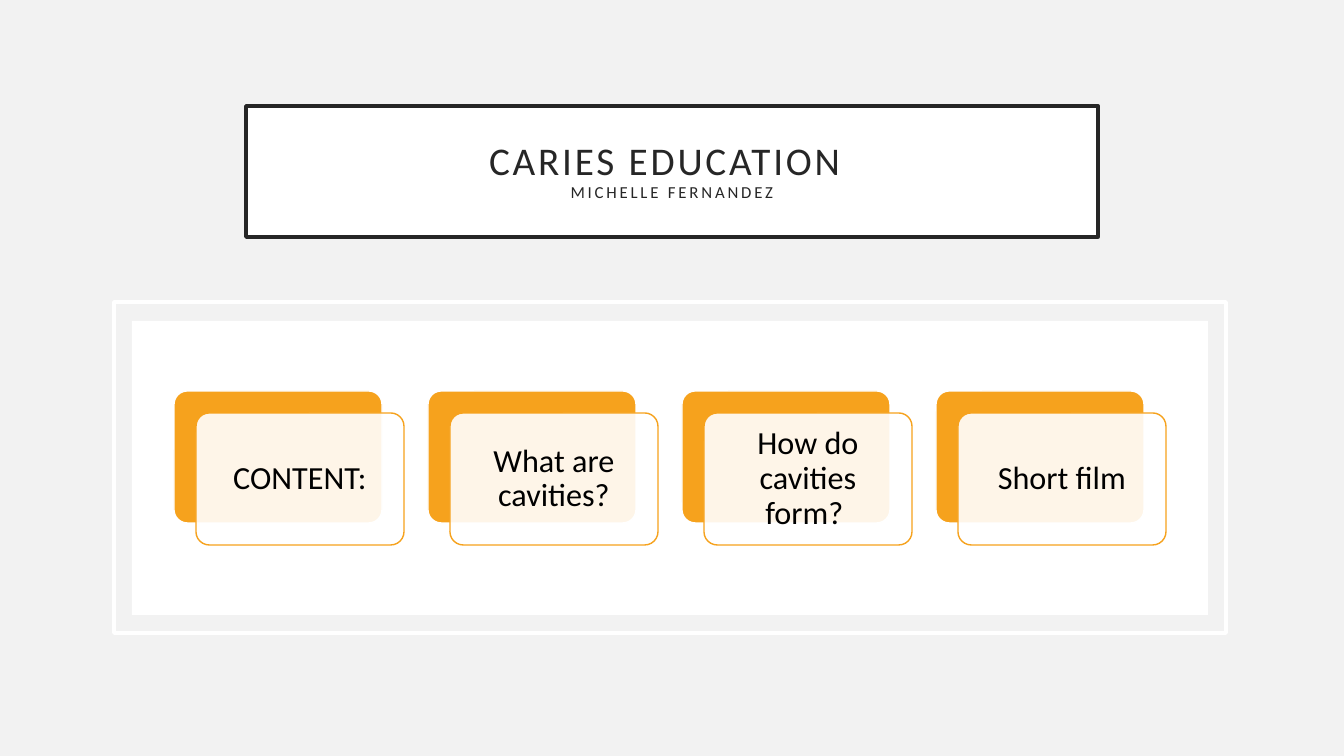
"""Build the title and contents slide of a caries education deck."""
from lxml import etree
from pptx import Presentation
from pptx import util as u
from pptx.dml.color import RGBColor
from pptx.enum import shapes, text
from pptx.oxml.ns import qn

TITLE = [("CARIES EDUCATION ", 28), ("MICHELLE FERNANDEZ", 12)]
TOPICS = ["CONTENT:", "What are cavities?", "How do cavities form? ", "Short film"]
COLOURS = {"page": "F2F2F2", "white": "FFFFFF", "ink": "262626",
           "orange": "F6A21D", "black": "000000"}
FONT = "Calibri"
PX = 914400 / 100.8
PAGE = (0, 0, 1344, 756)
TITLE_BOX = (246, 106, 852, 131)
FRAME = (114, 302, 1112, 331)
PANEL = (132, 321, 1076, 294)
CARD_LEFT, CARD_TOP, CARD_WIDTH, CARD_HEIGHT = 174, 391, 208, 132
CARD_PITCH, CARD_SHIFT = 254, 22


def px(length):
    return u.Emu(round(length * PX))


def colour(name):
    return RGBColor.from_string(COLOURS[name])


def add_box(page, place, fill=None, line=None, width=1, rounded=False, opacity=None):
    kind = shapes.MSO_SHAPE.ROUNDED_RECTANGLE if rounded else shapes.MSO_SHAPE.RECTANGLE
    box = page.shapes.add_shape(kind, *map(px, place))
    box.shadow.inherit = False
    if rounded:
        box.adjustments[0] = 0.1
    if fill:
        box.fill.solid()
        box.fill.fore_color.rgb = colour(fill)
    else:
        box.fill.background()
    if opacity:
        tone = box.fill._xPr.find(qn("a:solidFill"))[0]
        etree.SubElement(tone, qn("a:alpha")).set("val", str(opacity * 1000))
    if line:
        box.line.color.rgb = colour(line)
        box.line.width = u.Pt(width)
    else:
        box.line.fill.background()
    return box


def write(box, lines, ink="black", inset=10, spacing=None):
    frame = box.text_frame
    frame.word_wrap = True
    frame.vertical_anchor = text.MSO_ANCHOR.MIDDLE
    frame.margin_left = frame.margin_right = px(inset)
    frame.margin_top = frame.margin_bottom = px(inset)
    para = frame.paragraphs[0]
    para.alignment = text.PP_ALIGN.CENTER
    para.line_spacing = 0.9
    for index, (words, size) in enumerate(lines):
        if index:
            para.add_line_break()
        span = para.add_run()
        span.text = words
        span.font.name = FONT
        span.font.size = u.Pt(size)
        span.font.color.rgb = colour(ink)
        if spacing:
            span.font._element.set("spc", str(spacing * 100))


def main():
    deck = Presentation()
    deck.slide_width, deck.slide_height = px(PAGE[2]), px(PAGE[3])
    page = deck.slides.add_slide(deck.slide_layouts[6])
    add_box(page, PAGE, "page")
    title = add_box(page, TITLE_BOX, "white", "ink", 2.5)
    write(title, TITLE, "ink", inset=20, spacing=2)
    add_box(page, FRAME, line="white", width=2.5)
    add_box(page, PANEL, "white")
    for index, topic in enumerate(TOPICS):
        left = CARD_LEFT + index * CARD_PITCH
        size = (CARD_WIDTH, CARD_HEIGHT)
        add_box(page, (left, CARD_TOP, *size), "orange", "white", rounded=True)
        card = add_box(page, (left + CARD_SHIFT, CARD_TOP + CARD_SHIFT, *size),
                       "white", "orange", rounded=True, opacity=90)
        write(card, [(topic, 23)])
    deck.save("out.pptx")


if __name__ == "__main__":
    main()
